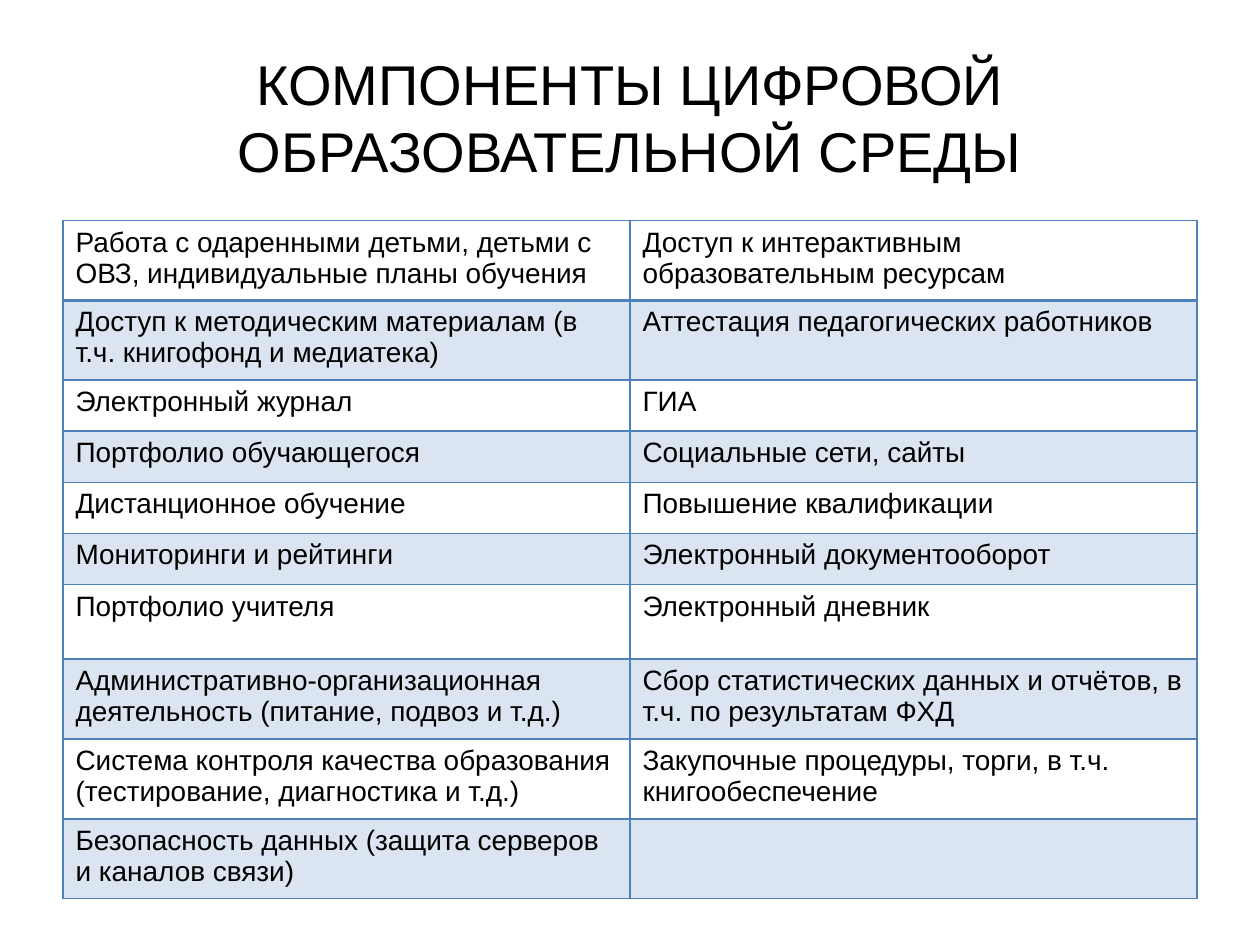
from lxml.etree import SubElement
from pptx import Presentation
from pptx.dml.color import RGBColor
from pptx.enum.text import MSO_ANCHOR as Anchor, PP_ALIGN as Align
from pptx.oxml.ns import qn
from pptx.util import Pt

BLACK = RGBColor(0x00, 0x00, 0x00)
BLUE = RGBColor(0x4F, 0x81, 0xBD)
BAND_OPACITY = 20
LEFT, WIDTH = 36, 648
SHORT_ROW, TALL_ROW = 29.2, 42.7
TALL_ROWS = {0, 1, 6, 7, 8, 9}

TITLE = "КОМПОНЕНТЫ ЦИФРОВОЙ ОБРАЗОВАТЕЛЬНОЙ СРЕДЫ"
COMPONENTS = [
    ("Работа с одаренными детьми, детьми с ОВЗ, индивидуальные планы обучения",
     "Доступ к интерактивным образовательным ресурсам"),
    ("Доступ к методическим материалам (в т.ч. книгофонд и медиатека)",
     "Аттестация педагогических работников"),
    ("Электронный журнал", "ГИА"),
    ("Портфолио обучающегося", "Социальные сети, сайты"),
    ("Дистанционное обучение", "Повышение квалификации"),
    ("Мониторинги и рейтинги", "Электронный документооборот"),
    ("Портфолио учителя", "Электронный дневник"),
    ("Административно-организационная деятельность (питание, подвоз и т.д.)",
     "Сбор статистических данных и отчётов, в т.ч. по результатам ФХД"),
    ("Система контроля качества образования (тестирование, диагностика и т.д.)",
     "Закупочные процедуры, торги, в т.ч. книгообеспечение"),
    ("Безопасность данных (защита серверов и каналов связи)", ""),
]


def write_text(frame, text, size, align=Align.LEFT):
    para = frame.paragraphs[0]
    para.alignment = align
    if text:
        para.add_run().text = text
    for span in [para, *para.runs]:
        for name, value in {"name": "Arial", "size": Pt(size), "bold": False}.items():
            setattr(span.font, name, value)
        span.font.color.rgb = BLACK


def add_title(page):
    box = page.shapes.add_textbox(Pt(LEFT), Pt(21.6), Pt(WIDTH), Pt(90))
    frame = box.text_frame
    for name, value in {"word_wrap": True, "vertical_anchor": Anchor.MIDDLE}.items():
        setattr(frame, name, value)
    write_text(frame, TITLE, 32, Align.CENTER)


def fill_cell(cell, banded):
    if not banded:
        cell.fill.background()
        return
    cell.fill.solid()
    cell.fill.fore_color.rgb = BLUE
    color = cell.fill._xPr.find(".//" + qn("a:srgbClr"))
    SubElement(color, qn("a:alpha"), val=str(BAND_OPACITY * 1000))


def set_borders(cell, widths):
    props = cell._tc.get_or_add_tcPr()
    for place, (side, width) in enumerate(widths.items()):
        line = SubElement(props, qn("a:ln" + side), w=str(Pt(width)))
        solid = SubElement(line, qn("a:solidFill"))
        SubElement(solid, qn("a:srgbClr"), val=str(BLUE))
        props.insert(place, line)  # borders come before the fill


def add_components_table(page):
    heights = [TALL_ROW if i in TALL_ROWS else SHORT_ROW
               for i in range(len(COMPONENTS))]
    table = page.shapes.add_table(len(COMPONENTS), 2, Pt(LEFT), Pt(126),
                                  Pt(WIDTH), Pt(sum(heights))).table
    for column in table.columns:
        column.width = Pt(WIDTH / 2)
    for i, (texts, height) in enumerate(zip(COMPONENTS, heights)):
        table.rows[i].height = Pt(height)
        # The line under the first row is thicker
        widths = {"L": 1, "R": 1, "T": 2 if i == 1 else 1, "B": 2 if i == 0 else 1}
        for cell, text in zip(table.rows[i].cells, texts):
            write_text(cell.text_frame, text, 16)
            fill_cell(cell, banded=i % 2 == 1)
            set_borders(cell, widths)


def main():
    deck = Presentation()
    deck.slide_width, deck.slide_height = Pt(720), Pt(540)
    page = deck.slides.add_slide(deck.slide_layouts[6])
    # Heading
    add_title(page)
    # Two columns of components
    add_components_table(page)
    deck.save("out.pptx")


if __name__ == "__main__":
    main()
